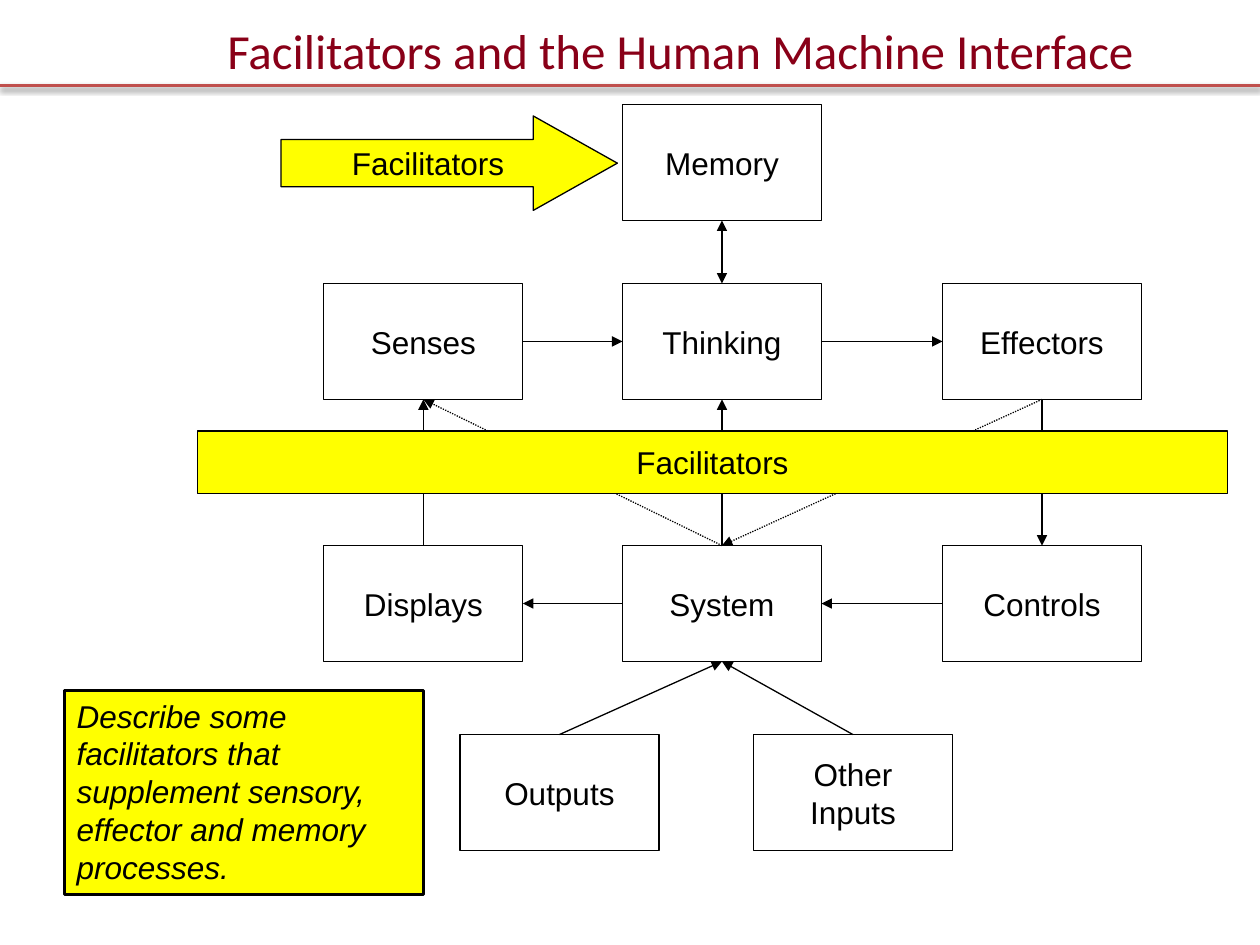
from lxml import etree
from pptx import Presentation
from pptx.dml.color import RGBColor
from pptx.enum.dml import MSO_LINE
from pptx.enum.shapes import MSO_CONNECTOR, MSO_SHAPE
from pptx.enum.text import MSO_ANCHOR, PP_ALIGN
from pptx.oxml.ns import qn
from pptx.util import Inches, Pt

RECT, ARROW = MSO_SHAPE.RECTANGLE, MSO_SHAPE.RIGHT_ARROW
STRAIGHT = MSO_CONNECTOR.STRAIGHT
DOTTED = MSO_LINE.ROUND_DOT
CENTER, LEFT = PP_ALIGN.CENTER, PP_ALIGN.LEFT
TOP, MIDDLE = MSO_ANCHOR.TOP, MSO_ANCHOR.MIDDLE

COLORS = {"ink": "000000", "title": "890018", "rule": "C0504D", "highlight": "FFFF00"}
SITES = {"top": 0, "left": 1, "bottom": 2, "right": 3}

# Diagram grid, in inches from the diagram's corner
COLS = [1.0, 2.08, 3.37, 4.41, 5.91]
ROWS = [0, 1.42, 3.5, 5.0]
NODE_W, NODE_H = 1.58, 0.92
NODES = {  # label: (column, row)
    "Memory": (2, 0),
    "Senses": (0, 1), "Thinking": (2, 1), "Effectors": (4, 1),
    "Displays": (0, 2), "System": (2, 2), "Controls": (4, 2),
    "Outputs": (1, 3), "Other\nInputs": (3, 3),
}
LINKS = [  # from, side, to, side
    ("Senses", "right", "Thinking", "left"),
    ("Thinking", "right", "Effectors", "left"),
    ("Controls", "left", "System", "right"),
    ("System", "left", "Displays", "right"),
    ("Other\nInputs", "top", "System", "bottom"),
    ("Outputs", "top", "System", "bottom"),
    ("Effectors", "bottom", "Controls", "top"),
    ("Displays", "top", "Senses", "bottom"),
    ("System", "top", "Thinking", "bottom"),
]
DOTTED_LINKS = [
    ("System", "top", "Senses", "bottom"),
    ("Effectors", "bottom", "System", "top"),
]


def rgb(name):
    return RGBColor.from_string(COLORS[name])


def write(tf, text, size=18, font="Arial", color="ink", align=CENTER, italic=False):
    for i, line in enumerate(text.split("\n")):
        p = tf.paragraphs[0] if i == 0 else tf.add_paragraph()
        p.alignment = align
        r = p.add_run()
        r.text = line
        r.font.size, r.font.name, r.font.italic = Pt(size), font, italic
        r.font.color.rgb = rgb(color)


def add_block(s, box, text, shape=RECT, fill=None, width=0.75, anchor=MIDDLE,
              wrap=False, **style):
    sp = s.shapes.add_shape(shape, *map(Inches, box))
    sp.shadow.inherit = False
    if fill:
        sp.fill.solid()
        sp.fill.fore_color.rgb = rgb(fill)
    else:
        sp.fill.background()
    sp.line.color.rgb, sp.line.width = rgb("ink"), Pt(width)
    sp.text_frame.word_wrap = wrap
    sp.text_frame.vertical_anchor = anchor
    write(sp.text_frame, text, **style)
    return sp


def add_line(s, start=(0, 0), end=(0, 0), color="ink", width=0.75):
    """Return a plain line and its empty effect list."""
    line = s.shapes.add_connector(STRAIGHT, *map(Inches, (*start, *end)))
    line.line.color.rgb, line.line.width = rgb(color), Pt(width)
    effects = etree.SubElement(line._element.spPr, qn("a:effectLst"))
    return line, effects


def link(s, nodes, source, side, target, target_side, dash=None, both=False):
    line, _ = add_line(s)
    line.begin_connect(nodes[source], SITES[side])
    line.end_connect(nodes[target], SITES[target_side])
    if dash:
        line.line.dash_style = dash
    ln = line._element.spPr.find(qn("a:ln"))
    for tag in ["a:headEnd", "a:tailEnd"] if both else ["a:tailEnd"]:
        etree.SubElement(ln, qn(tag), type="triangle")


def title_region(s, box, text, rule_y, slide_w):
    tb = s.shapes.add_textbox(*map(Inches, box))
    tb.text_frame.word_wrap = True
    tb.text_frame.vertical_anchor = TOP
    write(tb.text_frame, text, size=28, font="Calibri", color="title")
    # Rule with a soft shadow below it
    _, effects = add_line(s, (0, rule_y), (slide_w, rule_y), "rule", 2)
    shadow = etree.SubElement(effects, qn("a:outerShdw"), blurRad=str(Pt(3.1)),
                              dist=str(Pt(1.6)), dir="5400000", rotWithShape="0")
    tone = etree.SubElement(shadow, qn("a:srgbClr"), val=COLORS["ink"])
    etree.SubElement(tone, qn("a:alpha"), val="38000")


def diagram_region(s, box):
    x, y, w, _ = box
    nodes = {label: add_block(s, (x + COLS[c], y + ROWS[r], NODE_W, NODE_H), label)
             for label, (c, r) in NODES.items()}
    # Links between the nodes
    for ends in LINKS:
        link(s, nodes, *ends)
    for ends in DOTTED_LINKS:
        link(s, nodes, *ends, dash=DOTTED)
    link(s, nodes, "Thinking", "top", "Memory", "bottom", both=True)
    # Facilitators: arrow into memory, band across the interface
    arrow = add_block(s, (x + 0.66, y + 0.09, 2.67, 0.75), "Facilitators",
                      ARROW, "highlight")
    arrow.adjustments[0], arrow.adjustments[1] = 0.5, 0.89
    add_block(s, (x, y + 2.59, w, 0.5), "Facilitators", fill="highlight")


def prompt_region(s, box, text):
    add_block(s, box, text, fill="highlight", width=1.5, anchor=TOP, wrap=True,
              align=LEFT, italic=True)


def main():
    prs = Presentation()
    prs.slide_width, prs.slide_height = Inches(10), Inches(7.5)
    s = prs.slides.add_slide(prs.slide_layouts[6])
    diagram_region(s, (1.57, 0.83, 8.17, 5.92))
    prompt_region(s, (0.51, 5.48, 2.85, 1.62),
                  "Describe some facilitators that supplement sensory, "
                  "effector and memory processes.")
    title_region(s, (1.15, 0.11, 8.5, 0.83),
                 "Facilitators and the Human Machine Interface", 0.68, 10)
    prs.save("out.pptx")


if __name__ == "__main__":
    main()
